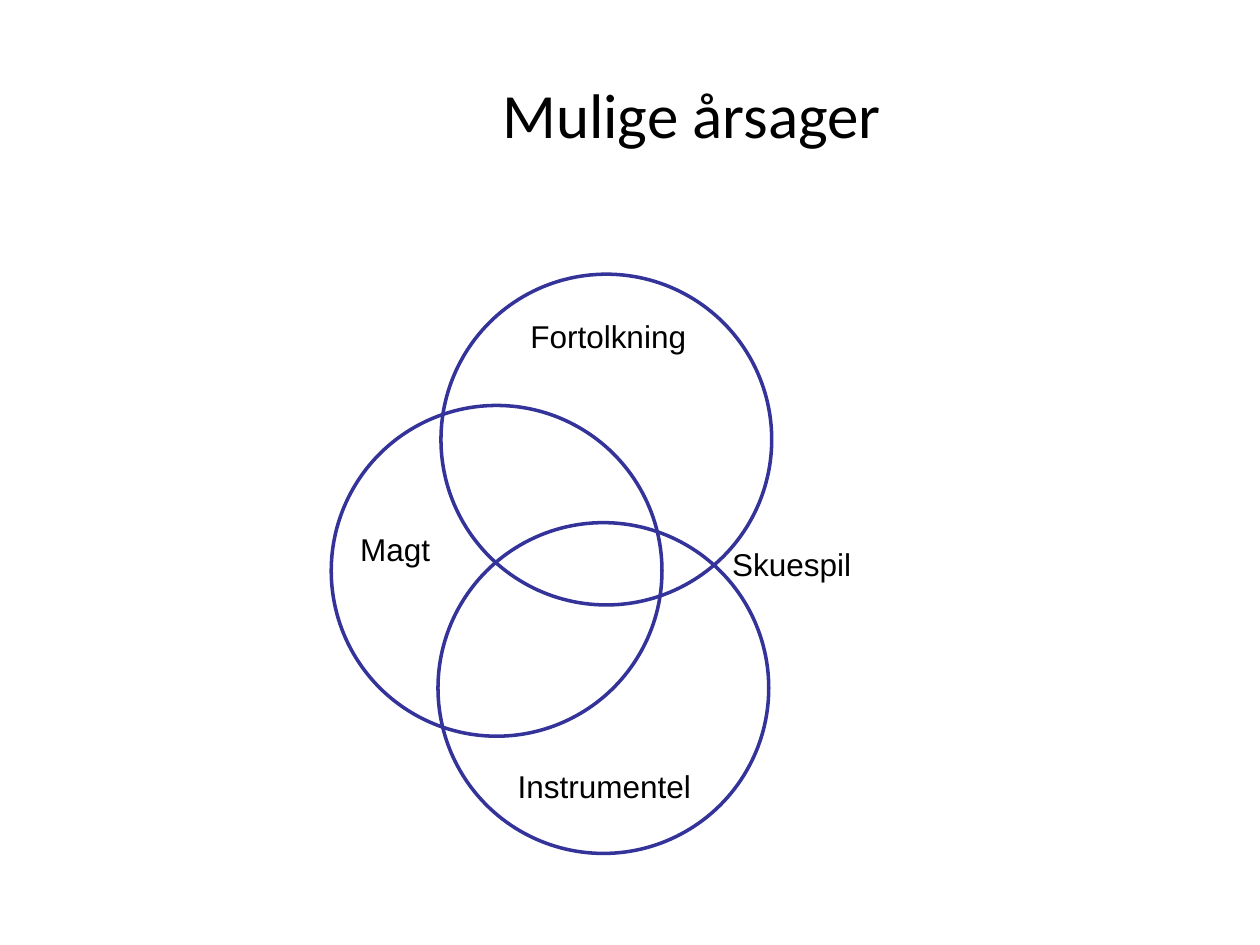
from dataclasses import dataclass

from pptx import Presentation
from pptx.dml.color import RGBColor
from pptx.enum.shapes import MSO_SHAPE
from pptx.enum.text import MSO_ANCHOR, MSO_AUTO_SIZE, PP_ALIGN
from pptx.slide import Slide
from pptx.text.text import TextFrame
from pptx.util import Pt

OVAL = MSO_SHAPE.OVAL
MIDDLE = MSO_ANCHOR.MIDDLE
CENTER = PP_ALIGN.CENTER
LEFT = PP_ALIGN.LEFT
FIT_SHAPE = MSO_AUTO_SIZE.SHAPE_TO_FIT_TEXT
NO_AUTO_SIZE = MSO_AUTO_SIZE.NONE

TITLE_ONLY_LAYOUT = 5
DIAMETER = 189
LABEL_HEIGHT = 29
BLACK = "000000"
INDIGO = "333399"


@dataclass(frozen=True)
class Circle:
    left: float
    top: float


@dataclass(frozen=True)
class Label:
    text: str
    left: float
    top: float
    width: float


CIRCLES = [Circle(252, 156.7), Circle(250.3, 298.7), Circle(189.3, 231.7)]
LABELS = [
    Label("Skuespil", 411.3, 307.8, 83.5),
    Label("Magt", 198.8, 299.2, 54.7),
    Label("Instrumentel", 288.7, 434.8, 118.8),
    Label("Fortolkning", 296, 177.8, 104.4),
]


def color(hex_value: str) -> RGBColor:
    return RGBColor.from_string(hex_value)


def write_text(frame: TextFrame, text: str, font_name: str, size: float,
               alignment: PP_ALIGN) -> None:
    paragraph = frame.paragraphs[0]
    paragraph.text = text
    paragraph.alignment = alignment
    paragraph.font.name = font_name
    paragraph.font.size = Pt(size)
    paragraph.font.color.rgb = color(BLACK)


def set_title(slide: Slide, text: str) -> None:
    title = slide.shapes.title
    title.left, title.top = Pt(70.5), Pt(20)
    title.width, title.height = Pt(649.5), Pt(90)
    frame = title.text_frame
    frame.auto_size = NO_AUTO_SIZE
    frame.vertical_anchor = MIDDLE
    write_text(frame, text, "Calibri", 36, CENTER)


def draw_circle(slide: Slide, circle: Circle) -> None:
    shape = slide.shapes.add_shape(
        OVAL, Pt(circle.left), Pt(circle.top), Pt(DIAMETER), Pt(DIAMETER))
    shape.shadow.inherit = False
    shape.fill.background()
    shape.line.color.rgb = color(INDIGO)
    shape.line.width = Pt(2)


def draw_label(slide: Slide, label: Label) -> None:
    box = slide.shapes.add_textbox(
        Pt(label.left), Pt(label.top), Pt(label.width), Pt(LABEL_HEIGHT))
    frame = box.text_frame
    frame.word_wrap = False
    frame.auto_size = FIT_SHAPE
    write_text(frame, label.text, "Arial", 18, LEFT)


def main() -> None:
    presentation = Presentation()
    presentation.slide_width = Pt(720)
    presentation.slide_height = Pt(540)
    layout = presentation.slide_layouts[TITLE_ONLY_LAYOUT]
    slide = presentation.slides.add_slide(layout)

    set_title(slide, "Mulige årsager")
    for circle in CIRCLES:
        draw_circle(slide, circle)
    for label in LABELS:
        draw_label(slide, label)

    presentation.save("out.pptx")


if __name__ == "__main__":
    main()
